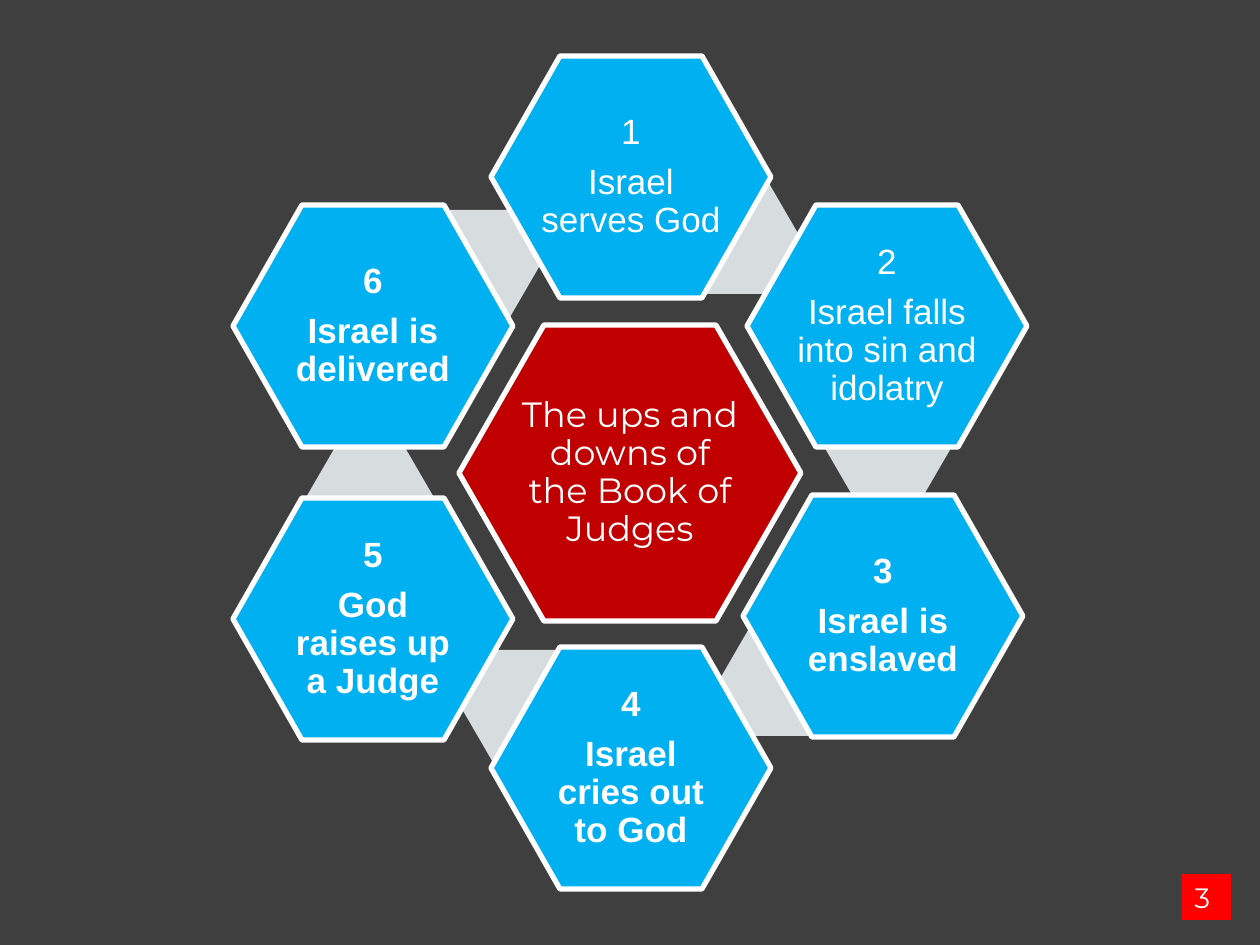
from dataclasses import dataclass

from pptx import Presentation
from pptx.dml.color import RGBColor
from pptx.enum.shapes import MSO_SHAPE
from pptx.enum.text import MSO_ANCHOR, MSO_AUTO_SIZE, PP_ALIGN
from pptx.shapes.autoshape import Shape
from pptx.slide import Slide
from pptx.util import Pt

HEXAGON, RECTANGLE = MSO_SHAPE.HEXAGON, MSO_SHAPE.RECTANGLE
MIDDLE, CENTER = MSO_ANCHOR.MIDDLE, PP_ALIGN.CENTER
FIT_SHAPE = MSO_AUTO_SIZE.SHAPE_TO_FIT_TEXT
EMU_PER_PX = 914400 / 126

BACKGROUND, WHITE, GREY = "3F3F3F", "FFFFFF", "D7DDDE"
BLUE, DARK_RED, RED = "00B0F0", "C00000", "FF0000"

PARAGRAPH_FORMAT = {"alignment": CENTER, "line_spacing": 0.9, "space_after": Pt(7)}


@dataclass
class HexagonStyle:
    width: int
    height: int
    corner: int
    inset_x: int
    inset_y: int
    fill: str
    font: str


@dataclass
class Stage:
    left: int
    top: int
    link_left: int
    link_top: int
    text: str
    bold: bool = True


CORE_STYLE = HexagonStyle(342, 296, 85, 60, 53, DARK_RED, "Montserrat")
STAGE_STYLE = HexagonStyle(280, 242, 69, 50, 44, BLUE, "Arial")
LINK_WIDTH, LINK_HEIGHT = 128, 111

# Each stage has a grey link partly hidden beneath it
STAGES = [
    Stage(491, 56, 673, 183, "Israel serves God", False),
    Stage(747, 205, 824, 391, "Israel falls into sin and idolatry", False),
    Stage(743, 495, 719, 625, "Israel is enslaved"),
    Stage(491, 647, 460, 650, "Israel cries out to God"),
    Stage(233, 498, 306, 442, "God raises up a Judge"),
    Stage(233, 205, 412, 210, "Israel is delivered"),
]


def px(length: int) -> int:
    return round(length * EMU_PER_PX)


def color(value: str) -> RGBColor:
    return RGBColor.from_string(value)


def set_format(target: object, values: dict) -> None:
    for name, value in values.items():
        setattr(target, name, value)


def paint(shape: Shape, fill: str) -> None:
    shape.shadow.inherit = False
    shape.fill.solid()
    shape.fill.fore_color.rgb = color(fill)
    shape.line.fill.background()


def add_preset(slide: Slide, kind: MSO_SHAPE, left: int, top: int,
               width: int, height: int, fill: str) -> Shape:
    shape = slide.shapes.add_shape(kind, px(left), px(top), px(width), px(height))
    paint(shape, fill)
    return shape


def write(paragraph, text: str, size: int, font: str, bold: bool = False) -> None:
    paragraph.text = text
    set_format(paragraph.font, {"name": font, "size": Pt(size), "bold": bold})
    paragraph.font.color.rgb = color(WHITE)


def add_hexagon(slide: Slide, left: int, top: int, style: HexagonStyle,
                lines: list[str], bold: bool = False) -> None:
    right, bottom = left + style.width, top + style.height
    middle = top + style.height // 2
    near, far = left + style.corner, right - style.corner
    points = [(left, middle), (near, top), (far, top),
              (right, middle), (far, bottom), (near, bottom)]
    start, *others = [(px(x), px(y)) for x, y in points]
    builder = slide.shapes.build_freeform(*start, scale=1.0)
    builder.add_line_segments(others, close=True)
    shape = builder.convert_to_shape()
    paint(shape, style.fill)
    shape.line.color.rgb = color(WHITE)
    shape.line.width = Pt(3)

    frame = shape.text_frame
    set_format(frame, {
        "word_wrap": True, "vertical_anchor": MIDDLE,
        "margin_left": px(style.inset_x), "margin_right": px(style.inset_x),
        "margin_top": px(style.inset_y), "margin_bottom": px(style.inset_y),
    })
    for index, line in enumerate(lines):
        paragraph = frame.add_paragraph() if index else frame.paragraphs[0]
        write(paragraph, line, 20, style.font, bold)
        set_format(paragraph, PARAGRAPH_FORMAT)


def add_page_number(slide: Slide, number: str) -> None:
    shape = add_preset(slide, RECTANGLE, 1182, 874, 49, 46, RED)
    frame = shape.text_frame
    set_format(frame, {"word_wrap": True, "auto_size": FIT_SHAPE,
                       "vertical_anchor": MSO_ANCHOR.TOP})
    write(frame.paragraphs[0], number, 16, "Montserrat")
    frame.paragraphs[0].alignment = PP_ALIGN.LEFT


def main() -> None:
    presentation = Presentation()
    presentation.slide_width, presentation.slide_height = px(1260), px(945)
    slide = presentation.slides.add_slide(presentation.slide_layouts[6])
    slide.background.fill.solid()
    slide.background.fill.fore_color.rgb = color(BACKGROUND)

    # Links behind the cycle
    for stage in STAGES:
        link = add_preset(slide, HEXAGON, stage.link_left, stage.link_top,
                          LINK_WIDTH, LINK_HEIGHT, GREY)
        link.adjustments[0] = 0.29

    # Centre and the numbered stages around it
    add_hexagon(slide, 459, 325, CORE_STYLE,
                ["The ups and downs of the Book of Judges"])
    for number, stage in enumerate(STAGES, start=1):
        add_hexagon(slide, stage.left, stage.top, STAGE_STYLE,
                    [str(number), stage.text], stage.bold)

    add_page_number(slide, "3")
    presentation.save("out.pptx")


if __name__ == "__main__":
    main()
